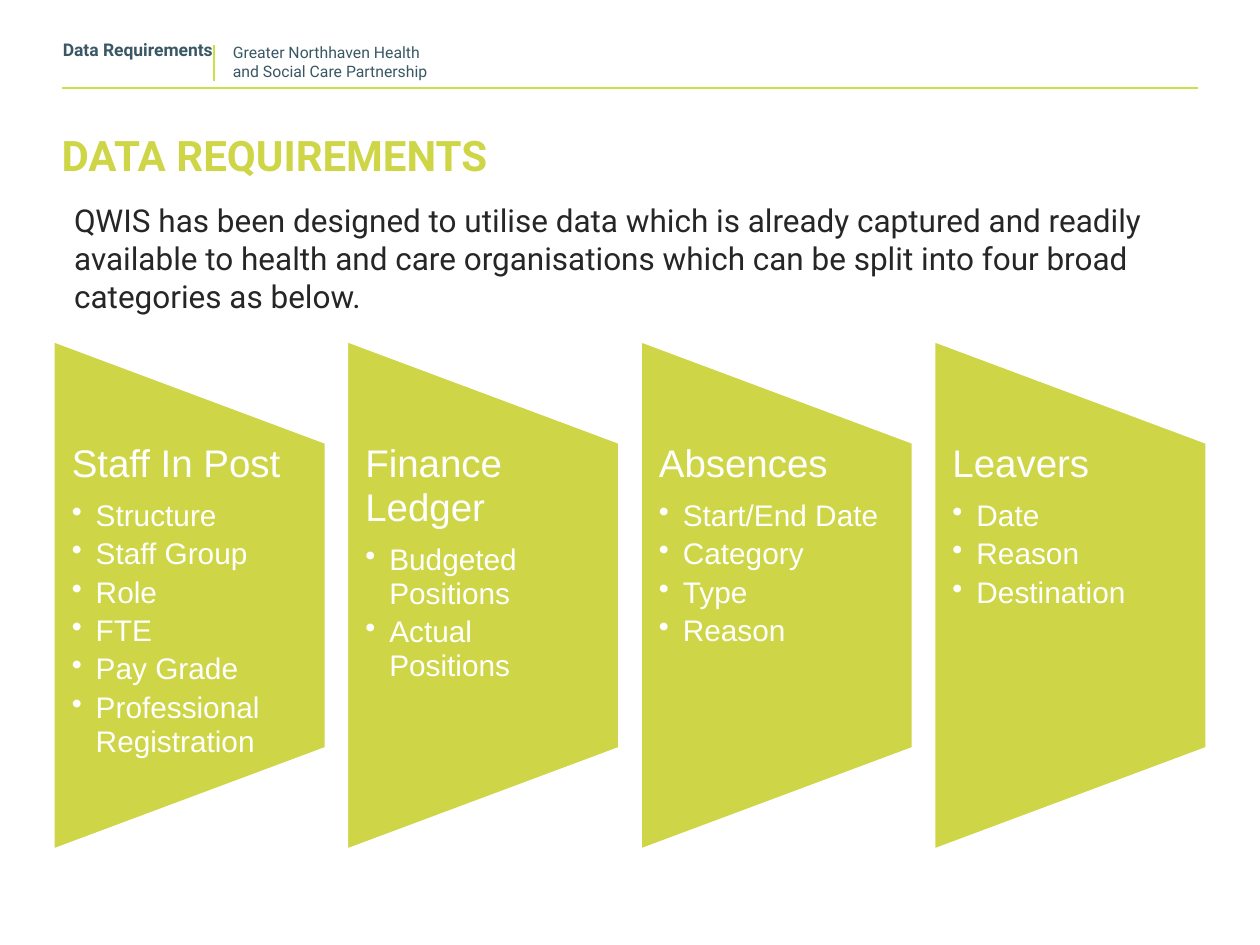
from dataclasses import dataclass

from lxml.etree import SubElement
from pptx import Presentation
from pptx.dml.color import RGBColor
from pptx.enum.shapes import MSO_CONNECTOR as Connector, MSO_SHAPE as Preset
from pptx.enum.text import MSO_ANCHOR as Anchor
from pptx.oxml.ns import qn
from pptx.util import Inches, Pt

COLUMNS, ROWS = 100, 75
SLIDE_W, SLIDE_H = Inches(10), Inches(7.5)


@dataclass(frozen=True)
class Theme:
    lime: str = "CED647"
    rule: str = "C7E146"
    slate: str = "395764"
    ink: str = "262626"
    white: str = "FFFFFF"
    main_font: str = "Roboto"
    panel_font: str = "Arial"
    partner_size: float = 9
    section_size: float = 10
    title_size: float = 24
    intro_size: float = 18
    heading_size: float = 22
    item_size: float = 17


@dataclass(frozen=True)
class Box:
    """An area in grid columns and rows."""
    left: float
    top: float
    width: float
    height: float

    def inner(self, x, y, width, height):
        """The area at the given shares of this one."""
        return Box(self.left + x * self.width, self.top + y * self.height,
                   width * self.width, height * self.height)

    def emu(self):
        return (col(self.left), row(self.top), col(self.width), row(self.height))


THEME = Theme()
CATEGORIES = {
    "Staff In Post": ["Structure", "Staff Group", "Role", "FTE", "Pay Grade",
                      "Professional Registration"],
    "Finance Ledger": ["Budgeted Positions", "Actual Positions"],
    "Absences": ["Start/End Date", "Category", "Type", "Reason"],
    "Leavers": ["Date", "Reason", "Destination"],
}
INTRO = ("QWIS has been designed to utilise data which is already captured and "
         "readily available to health and care organisations which can be split "
         "into four broad categories as below.")


def col(count):
    return round(SLIDE_W * count / COLUMNS)


def row(count):
    return round(SLIDE_H * count / ROWS)


def apply(target, formats):
    for name, value in formats.items():
        setattr(target, name, value)


def add_frame(slide, box, **formats):
    frame = slide.shapes.add_textbox(*box.emu()).text_frame
    apply(frame, {"word_wrap": True, **formats})
    return frame


def write(paragraph, text, color, size, font=THEME.main_font, bold=False, **spacing):
    run = paragraph.add_run()
    run.text = text
    apply(run.font, {"name": font, "size": Pt(size), "bold": bold})
    run.font.color.rgb = RGBColor.from_string(color)
    apply(paragraph, spacing)


def add_bullet(paragraph):
    properties = paragraph._p.get_or_add_pPr()
    indent = col(1.9)
    properties.set("marL", str(indent))
    properties.set("indent", str(-indent))
    SubElement(properties, qn("a:buChar")).set("char", "•")


def add_rule(slide, x1, y1, x2, y2):
    rule = slide.shapes.add_connector(Connector.STRAIGHT, col(x1), row(y1),
                                      col(x2), row(y2))
    rule.line.color.rgb = RGBColor.from_string(THEME.rule)
    rule.line.width = Pt(1)
    SubElement(rule._element.spPr, qn("a:effectLst"))


def add_header(slide, box):
    right, bottom = box.left + box.width, box.top + box.height
    divider = box.left + 12.1
    add_rule(slide, box.left, bottom, right, bottom)
    add_rule(slide, divider, bottom - 0.6, divider, bottom - 3.4)

    partner = add_frame(slide, Box(divider + 0.5, box.top + 0.1, 26.1, 4),
                        vertical_anchor=Anchor.MIDDLE)
    lines = ["Greater Northhaven Health", "and Social Care Partnership"]
    write(partner.paragraphs[0], lines[0], THEME.slate, THEME.partner_size)
    write(partner.add_paragraph(), lines[1], THEME.slate, THEME.partner_size)

    section = add_frame(slide, Box(box.left - 0.9, box.top, 15.1, 3.8))
    write(section.paragraphs[0], "Data Requirements", THEME.slate,
          THEME.section_size, bold=True, line_spacing=0.9, space_before=Pt(2))


def add_title(slide, box):
    title = add_frame(slide, box, vertical_anchor=Anchor.MIDDLE)
    write(title.paragraphs[0], "DATA REQUIREMENTS", THEME.lime,
          THEME.title_size, bold=True)


def add_intro(slide, box):
    intro = add_frame(slide, box)
    write(intro.paragraphs[0], INTRO, THEME.ink, THEME.intro_size,
          space_before=Pt(3.6))


def add_category(slide, box, heading, items):
    """A trapezoid turned on its side, with its text in the middle three fifths."""
    left, top, width, height = box.emu()
    shift = (height - width) // 2
    panel = slide.shapes.add_shape(Preset.FLOWCHART_MANUAL_OPERATION,
                                   left - shift, top + shift, height, width)
    panel.rotation = 270
    panel.shadow.inherit = False
    panel.fill.solid()
    panel.fill.fore_color.rgb = RGBColor.from_string(THEME.lime)
    panel.line.color.rgb = RGBColor.from_string(THEME.white)
    panel.line.width = Pt(2)

    frame = add_frame(slide, box.inner(0, 0.2, 1, 0.6), margin_left=col(1.5),
                      margin_right=col(1.5), margin_top=0, margin_bottom=0)
    write(frame.paragraphs[0], heading, THEME.white, THEME.heading_size,
          THEME.panel_font, line_spacing=0.95, space_after=Pt(7.7))
    for item in items:
        paragraph = frame.add_paragraph()
        write(paragraph, item, THEME.white, THEME.item_size, THEME.panel_font,
              level=1, line_spacing=0.95, space_after=Pt(2.5))
        add_bullet(paragraph)


def add_categories(slide, box, gap):
    count = len(CATEGORIES)
    width = (box.width - gap * (count - 1)) / count
    for index, (heading, items) in enumerate(CATEGORIES.items()):
        panel_box = Box(box.left + index * (width + gap), box.top, width, box.height)
        add_category(slide, panel_box, heading, items)


def main():
    deck = Presentation()
    apply(deck, {"slide_width": SLIDE_W, "slide_height": SLIDE_H})
    slide = deck.slides.add_slide(deck.slide_layouts[6])
    add_header(slide, Box(4.9, 2.8, 90.2, 4.2))
    add_title(slide, Box(3.9, 9.1, 40.7, 6.4))
    add_categories(slide, Box(4.2, 27, 91.6, 40.5), gap=1.6)
    add_intro(slide, Box(4.9, 15.5, 90.8, 10.3))
    deck.save("out.pptx")


if __name__ == "__main__":
    main()
